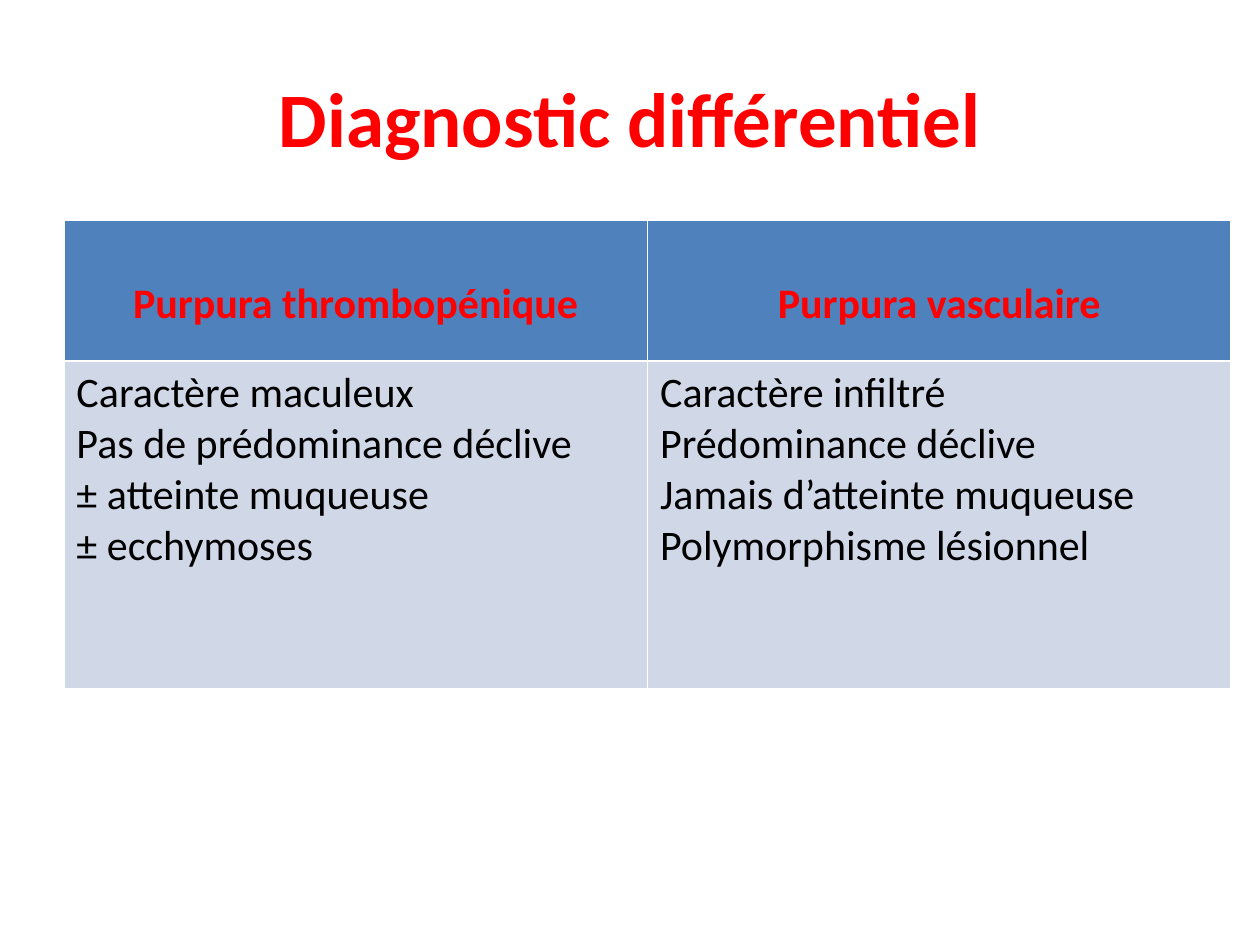
import pptx
import pptx.util
import pptx.dml.color
import pptx.enum.text

Pt = pptx.util.Pt
ALIGN = pptx.enum.text.PP_ALIGN
FONT = "Calibri"
RED, BLACK = "FF0000", "000000"
HEADER_FILL, BODY_FILL = "4F81BD", "D0D8E8"

COMPARISON = {
    "Purpura thrombopénique": [
        "Caractère maculeux",
        "Pas de prédominance déclive",
        "± atteinte muqueuse",
        "± ecchymoses",
    ],
    "Purpura vasculaire": [
        "Caractère infiltré",
        "Prédominance déclive",
        "Jamais d’atteinte muqueuse",
        "Polymorphisme lésionnel",
    ],
}


def rgb(hex_color):
    return pptx.dml.color.RGBColor.from_string(hex_color)


def write_lines(frame, lines, size, color, bold, align):
    for index, line in enumerate(lines):
        paragraph = frame.paragraphs[0] if index == 0 else frame.add_paragraph()
        paragraph.alignment = align
        run = paragraph.add_run()
        run.text = line
        run.font.name = FONT
        run.font.size = Pt(size)
        run.font.bold = bold
        run.font.color.rgb = rgb(color)


def fill_cell(cell, lines, fill, color, bold, align):
    cell.fill.solid()
    cell.fill.fore_color.rgb = rgb(fill)
    write_lines(cell.text_frame, lines, 24, color, bold, align)


def place_heading(slide, left, top, width, height):
    heading = slide.shapes.title
    heading.left, heading.top = Pt(left), Pt(top)
    heading.width, heading.height = Pt(width), Pt(height)
    heading.text_frame.vertical_anchor = pptx.enum.text.MSO_ANCHOR.MIDDLE
    write_lines(heading.text_frame, ["Diagnostic différentiel"], 44, RED, True, ALIGN.CENTER)


def place_comparison(slide, left, top, width, height):
    # The default table style supplies the white rules between cells
    comparison = slide.shapes.add_table(
        2, len(COMPARISON), Pt(left), Pt(top), Pt(width), Pt(height)).table
    header_height = height * 0.3
    comparison.rows[0].height = Pt(header_height)
    comparison.rows[1].height = Pt(height - header_height)

    for column, (purpura, signs) in enumerate(COMPARISON.items()):
        # Header sits one line below the top of its cell
        header = comparison.cell(0, column)
        header.margin_top = Pt(33)
        fill_cell(header, [purpura], HEADER_FILL, RED, True, ALIGN.CENTER)
        # Clinical signs
        fill_cell(comparison.cell(1, column), signs, BODY_FILL, BLACK, False, ALIGN.LEFT)


def main():
    deck = pptx.Presentation()
    deck.slide_width, deck.slide_height = Pt(720), Pt(540)
    slide = deck.slides.add_slide(deck.slide_layouts[5])
    place_heading(slide, 36, 21.6, 648, 90)
    place_comparison(slide, 36.5, 126, 667, 267.5)
    deck.save("out.pptx")


if __name__ == "__main__":
    main()
